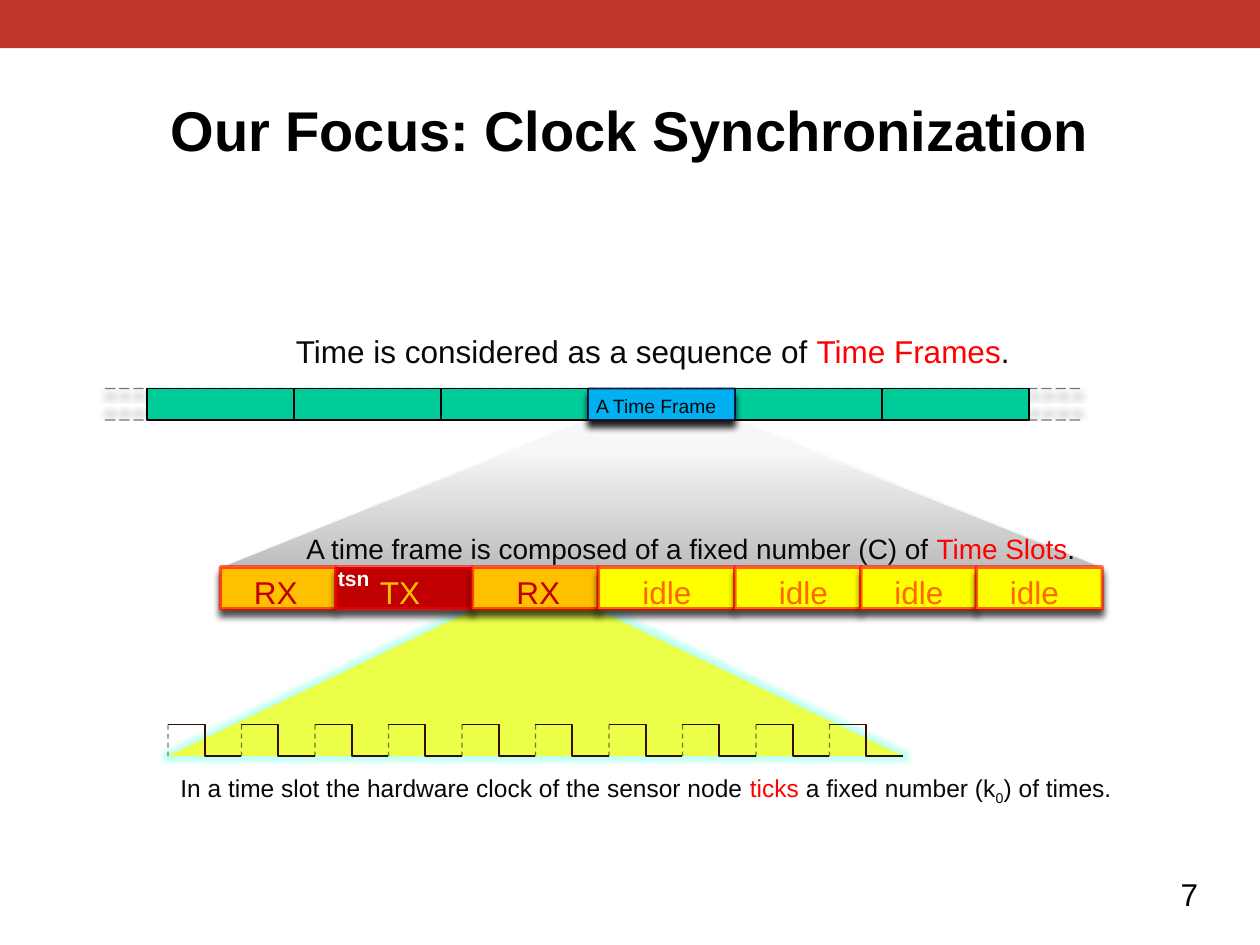
from lxml import etree
from pptx import Presentation
from pptx import util as u
from pptx.dml.color import RGBColor
from pptx.enum import dml, shapes, text
from pptx.oxml.ns import qn

PX = 7620  # 120 px to the inch
RECT, TRAPEZOID = shapes.MSO_SHAPE.RECTANGLE, shapes.MSO_SHAPE.TRAPEZOID
STRAIGHT, ELBOW = shapes.MSO_CONNECTOR.STRAIGHT, shapes.MSO_CONNECTOR.ELBOW
INK, RED = "080808", "FF0000"


def paint(fill, color, alpha=100):
    """Solid fill with a hex colour and an opacity in percent."""
    fill.solid()
    fill.fore_color.rgb = RGBColor.from_string(color)
    if alpha < 100:
        clr = fill._xPr.find(".//" + qn("a:srgbClr"))
        etree.SubElement(clr, qn("a:alpha"), val=str(alpha * 1000))


def effect(sp, kind=None, color="000000", alpha=100, **lengths):
    """Replace the theme's shadow by one effect, or by none."""
    lst = etree.SubElement(sp._element.spPr, qn("a:effectLst"))
    if kind:
        e = etree.SubElement(lst, qn("a:" + kind),
                             {k: str(int(v)) for k, v in lengths.items()})
        clr = etree.SubElement(e, qn("a:srgbClr"), val=color)
        etree.SubElement(clr, qn("a:alpha"), val=str(alpha * 1000))


prs = Presentation()
prs.slide_width, prs.slide_height = 1200 * PX, 900 * PX
s = prs.slides.add_slide(prs.slide_layouts[5])
DOWN, UP = 90 * 60000, 270 * 60000
near = dict(blurRad=u.Pt(4), dist=u.Pt(4))

# Title
title = s.shapes.title
title.left, title.top, title.width, title.height = 90 * PX, 84 * PX, 1020 * PX, 77 * PX
tf = title.text_frame
tf.text = "Our Focus: Clock Synchronization"
tf.vertical_anchor = text.MSO_ANCHOR.MIDDLE
p = tf.paragraphs[0]
p.alignment = text.PP_ALIGN.CENTER
p.font.name, p.font.size, p.font.bold = "Arial", u.Pt(32), True
paint(p.font.fill, "000000")

# Top band
band = s.shapes.add_shape(RECT, 0, 0, 1200 * PX, 46 * PX)
paint(band.fill, "BF3528")
band.line.fill.background()
effect(band)

# Zoom from one frame to its slots
zoom = s.shapes.add_shape(TRAPEZOID, 210 * PX, 400 * PX, 840 * PX, 140 * PX)
zoom.adjustments[0] = 2.5
zoom.fill.gradient()
zoom.fill.gradient_angle = 90
for stop, pos, color in zip(zoom.fill.gradient_stops, (0, 0.8), ("BEBEBE", "F7F7F7")):
    stop.position = pos
    stop.color.rgb = RGBColor.from_string(color)
paint(zoom.line.fill, "F9F9F9")
zoom.line.width = u.Pt(0.75)
effect(zoom, "outerShdw", alpha=35, blurRad=u.Pt(3.1), dist=u.Pt(1.8), dir=DOWN)

# Zoom from one slot to its clock ticks
zoom = s.shapes.add_shape(TRAPEZOID, 160 * PX, 580 * PX, 700 * PX, 140 * PX)
zoom.adjustments[0] = 2.09
paint(zoom.fill, "FFFF00", 70)
zoom.line.fill.background()
effect(zoom, "glow", "00FFCC", 25, rad=u.Pt(6))

# Time slots
x = 210
for width, color in ((110, "FFC000"), (130, "C00000"), (120, "FFC000"), (130, "FFFF00"),
                     (120, "FFFF00"), (110, "FFFF00"), (120, "FFFF00")):
    slot = s.shapes.add_shape(RECT, x * PX, 540 * PX, width * PX, 40 * PX)
    paint(slot.fill, color)
    paint(slot.line.fill, RED, 60)
    slot.line.width = u.Pt(2)
    effect(slot, "outerShdw", alpha=71, dir=DOWN, **near)
    x += width

# Clock signal: a falling step and a dashed rise per tick
clock = s.shapes.add_group_shape()
for i in range(10):
    x = 160 + 70 * i
    for kind, end, color, alpha, width in ((ELBOW, x + 70, "360D00", 100, 1),
                                           (STRAIGHT, x, "00140F", 55, 0.75)):
        tick = clock.shapes.add_connector(kind, x * PX, 690 * PX, end * PX, 720 * PX)
        paint(tick.line.fill, color, alpha)
        tick.line.width = u.Pt(width)
        if kind == STRAIGHT:
            tick.line.dash_style = dml.MSO_LINE.DASH
        effect(tick)

# Dashed rails that continue the sequence of frames
for y, direction in ((400, UP), (370, DOWN)):
    rail = s.shapes.add_connector(STRAIGHT, 100 * PX, y * PX, 1030 * PX, y * PX)
    paint(rail.line.fill, "00140F", 55)
    rail.line.width = u.Pt(0.75)
    rail.line.dash_style = dml.MSO_LINE.LONG_DASH
    effect(rail, "outerShdw", alpha=97, dir=direction, **near)

# Time frames, the highlighted one on top
for i in (0, 1, 2, 4, 5, 3):
    frame = s.shapes.add_shape(RECT, (140 + 140 * i) * PX, 370 * PX, 140 * PX, 30 * PX)
    if i == 3:
        paint(frame.fill, "00B0F0")
        paint(frame.line.fill, "0B0B2E", 90)
        frame.line.width = u.Pt(1)
        effect(frame, "outerShdw", alpha=88, dir=DOWN, **near)
    else:
        paint(frame.fill, "00CC99")
        paint(frame.line.fill, "000000")
        frame.line.width = u.Pt(0.75)
        effect(frame)

# Captions and labels: left, top, width, height, size, alignment, runs
LEFT, CENTER, RIGHT = text.PP_ALIGN.LEFT, text.PP_ALIGN.CENTER, text.PP_ALIGN.RIGHT
labels = [
    (270, 310, 709, 48, 18, LEFT, [("Time is considered as a sequence of ", INK),
                                   ("Time Frames", RED), (".", INK)]),
    (280, 500, 766, 44, 16, LEFT,
     [("A time frame is composed of a fixed number (C) of ", INK),
      ("Time Slots", RED), (".", INK)]),
    (160, 730, 922, 41, 14, LEFT,
     [("In a time slot the hardware clock of the sensor node ", INK), ("ticks", RED),
      (" a fixed number (k", INK), ("0", INK), (") of times.", INK)]),
    (550, 370, 150, 35, 11, CENTER, [("A Time Frame", INK)]),
    (310, 533, 88, 36, 12, LEFT, [("tsn", "FFFFFF")]),
    (1074, 827, 79, 48, 18, RIGHT, [("7", "000000")]),
    (350, 540, 62, 48, 18, LEFT, [("TX", "FFC000")]),
]
labels += [(x, 540, 66, 48, 18, LEFT, [("RX", "C00000")]) for x in (230, 480)]
labels += [(x, 540, 72, 48, 18, LEFT, [("idle", "FF6600")]) for x in (600, 730, 840, 950)]
for x, y, w, h, size, align, runs in labels:
    box = s.shapes.add_textbox(x * PX, y * PX, w * PX, h * PX)
    tf = box.text_frame
    tf.word_wrap = align == CENTER
    p = tf.paragraphs[0]
    p.alignment = align
    p.font.name, p.font.size = "Arial", u.Pt(size)
    p.font.bold = runs[0][0] == "tsn"
    for words, color in runs:
        r = p.add_run()
        r.text = words
        paint(r.font.fill, color)
        if words == "0":
            r.font._element.set("baseline", "-25000")

prs.save("out.pptx")
